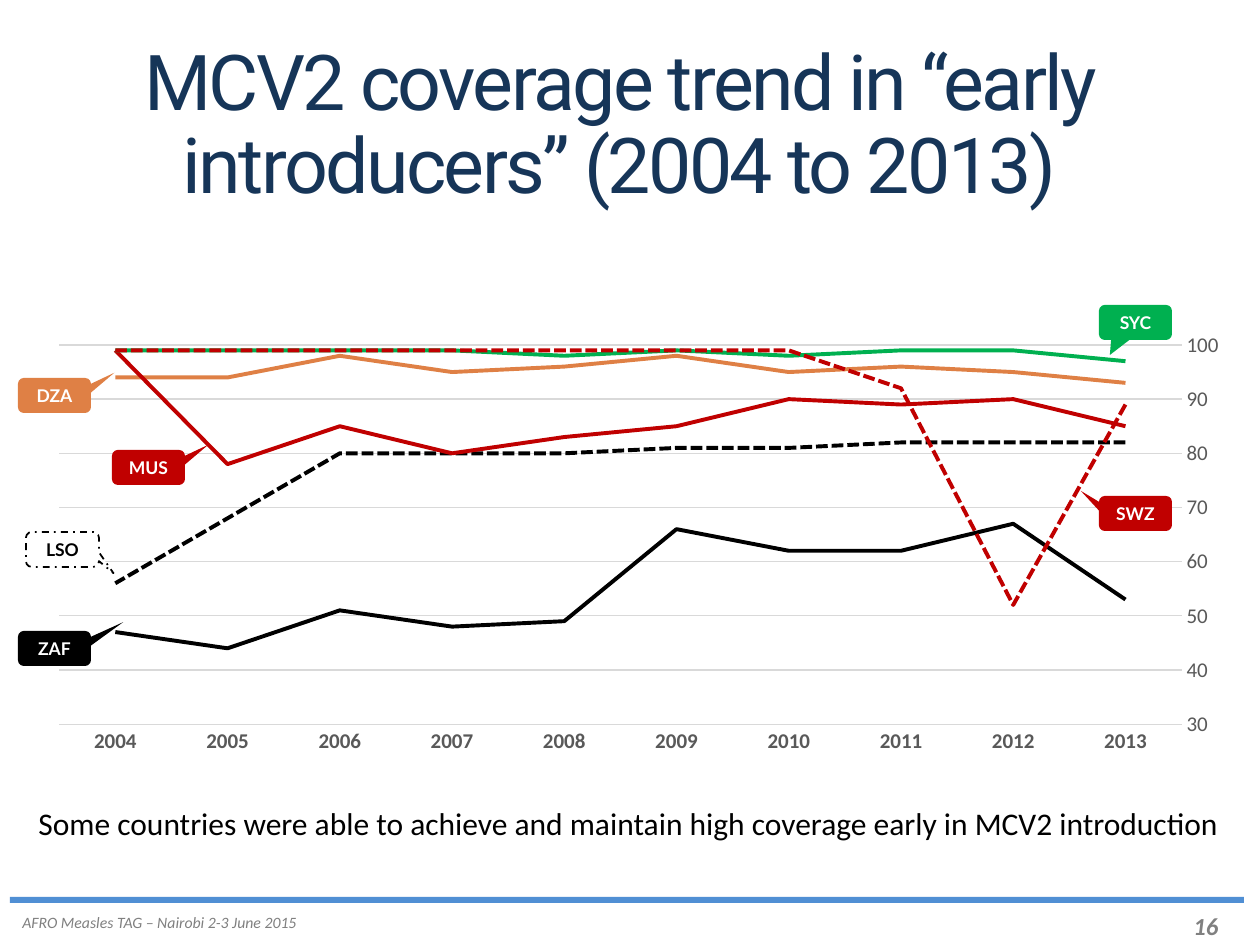
from lxml import etree
from pptx import Presentation
from pptx.chart.data import CategoryChartData
from pptx.dml.color import RGBColor
from pptx.enum.chart import XL_CHART_TYPE as ChartType, XL_TICK_MARK as TickMark
from pptx.enum.dml import MSO_LINE as Dash
from pptx.enum.shapes import MSO_SHAPE as Shape
from pptx.enum.text import MSO_ANCHOR as Anchor, MSO_AUTO_SIZE as AutoSize, PP_ALIGN as Align
from pptx.oxml.ns import qn
from pptx.util import Emu, Pt

BLACK, WHITE, RED = "000000", "FFFFFF", "C00000"
ORANGE, GREEN, GRID = "DF8045", "00B050", "D9D9D9"
GREY, AXIS = "808080", "595959"


def px(length):
    return Emu(round(length * 914400 / 126))


def area(*lengths):
    return [px(length) for length in lengths]


def color(value):
    return RGBColor.from_string(value)


class Page:
    body_font = "Calibri"
    label_font = "Lato"
    title_font = "Roboto"

    def __init__(self, deck):
        self.slide = deck.slides.add_slide(deck.slide_layouts[5])
        self.shapes = self.slide.shapes

    def style(self, font, name, size, hue, bold=False, italic=False):
        font.name, font.size = name, Pt(size)
        font.bold, font.italic = bold, italic
        font.color.rgb = color(hue)

    def stroke(self, line, hue, width, dash=None):
        line.color.rgb = color(hue)
        line.width = Pt(width)
        if dash:
            line.dash_style = dash

    def title(self, text, box):
        title = self.shapes.title
        title.left, title.top, title.width, title.height = area(*box)
        frame = title.text_frame
        frame.text = text
        frame.word_wrap = True
        frame.auto_size = AutoSize.NONE
        frame.vertical_anchor = Anchor.TOP
        frame.margin_left = frame.margin_right = frame.margin_top = frame.margin_bottom = 0
        para = frame.paragraphs[0]
        para.alignment = Align.CENTER
        para.line_spacing = 0.9
        self.style(para.font, self.title_font, 44, "163558")
        para.runs[0].font._element.set("spc", "-150")

    def text(self, text, box, size, hue, **looks):
        frame = self.shapes.add_textbox(*area(*box)).text_frame
        frame.text = text
        frame.word_wrap = False
        frame.auto_size = AutoSize.SHAPE_TO_FIT_TEXT
        self.style(frame.paragraphs[0].font, self.body_font, size, hue, **looks)

    def shape(self, kind, box, fill):
        shape = self.shapes.add_shape(kind, *area(*box))
        shape.shadow.inherit = False
        shape.fill.solid()
        shape.fill.fore_color.rgb = color(fill)
        shape.line.fill.background()
        return shape

    def callout(self, text, left, top, tip, fill, hue=WHITE, outline=None):
        callout = self.shape(Shape.ROUNDED_RECTANGULAR_CALLOUT, (left, top, 73, 35), fill)
        callout.adjustments[0], callout.adjustments[1] = tip
        if outline:
            self.stroke(callout.line, outline, 1, Dash.DASH_DOT)
        frame = callout.text_frame
        frame.text = text
        frame.vertical_anchor = Anchor.MIDDLE
        para = frame.paragraphs[0]
        para.alignment = Align.CENTER
        self.style(para.font, self.label_font, 10, hue, bold=True)

    def line_chart(self, box, categories, lines):
        data = CategoryChartData()
        data.categories = categories
        for number, (values, _, _) in enumerate(lines, 1):
            data.add_series(f"Series {number}", values)
        chart = self.shapes.add_chart(ChartType.LINE, *area(*box), data).chart
        chart.has_legend = chart.has_title = False
        self.style(chart.font, self.body_font, 10, BLACK)
        chart.plots[0].vary_by_categories = False
        for series, (_, hue, dash) in zip(chart.plots[0].series, lines):
            series.smooth = False
            self.stroke(series.format.line, hue, 2.25, dash)

        years, coverage = chart.category_axis, chart.value_axis
        for axis in (years, coverage):
            axis.major_tick_mark = axis.minor_tick_mark = TickMark.NONE
            self.style(axis.tick_labels.font, self.body_font, 12, AXIS, bold=axis is years)
        years.reverse_order = True
        self.stroke(years.format.line, GRID, 0.75)
        coverage.minimum_scale, coverage.maximum_scale = 30, 100
        coverage.major_unit = 10
        coverage.format.line.fill.background()
        self.stroke(coverage.major_gridlines.format.line, GRID, 0.75)
        self.place_plot(chart, x=0.02, y=0.05, w=0.93, h=0.86)

    def place_plot(self, chart, **parts):
        plot_area = chart._chartSpace.chart.plotArea
        for old in plot_area.findall(qn("c:layout")):
            plot_area.remove(old)
        layout = etree.Element(qn("c:layout"))
        plot_area.insert(0, layout)
        manual = etree.SubElement(layout, qn("c:manualLayout"))
        settings = {"layoutTarget": "inner", "xMode": "edge", "yMode": "edge", **parts}
        for name, value in settings.items():
            etree.SubElement(manual, qn(f"c:{name}")).set("val", str(value))


def main():
    deck = Presentation()
    deck.slide_width, deck.slide_height = area(1260, 945)
    page = Page(deck)

    page.text("16", (1181, 905, 55, 43), 14, GREY, bold=True, italic=True)
    page.text("AFRO Measles TAG – Nairobi 2-3 June 2015", (10, 907, 302, 32), 9, GREY, italic=True)
    page.shape(Shape.RECTANGLE, (10, 897, 1234, 6), "508FD4")
    page.title("MCV2 coverage trend in “early introducers” (2004 to 2013)", (26, 44, 1187, 170))

    years = [str(year) for year in range(2013, 2003, -1)]
    page.line_chart((35, 323, 1207, 441), years, [
        ([93, 95, 96, 95, 98, 96, 95, 98, 94, 94], ORANGE, None),
        ([82, 82, 82, 81, 81, 80, 80, 80, 68, 56], BLACK, Dash.SQUARE_DOT),
        ([85, 90, 89, 90, 85, 83, 80, 85, 78, 99], RED, None),
        ([97, 99, 99, 98, 99, 98, 99, 99, 99, 99], GREEN, None),
        ([53, 67, 62, 62, 66, 49, 48, 51, 44, 47], BLACK, None),
        ([89, 52, 92, 99, 99, 99, 99, 99, 99, 99], RED, Dash.SQUARE_DOT),
    ])

    page.callout("ZAF", 18, 631, (0.94, -0.75), BLACK)
    page.callout("LSO", 26, 532, (0.7, 0.68), WHITE, BLACK, outline=BLACK)
    page.callout("MUS", 112, 450, (0.82, -0.65), RED)
    page.callout("DZA", 18, 378, (0.82, -0.65), ORANGE)
    page.callout("SWZ", 1099, 496, (-0.75, -0.65), RED)
    page.callout("SYC", 1099, 305, (-0.35, 0.93), GREEN)

    page.text("Some countries were able to achieve and maintain high coverage early in MCV2 introduction",
              (26, 798, 1213, 50), 18, BLACK)
    deck.save("out.pptx")


if __name__ == "__main__":
    main()
